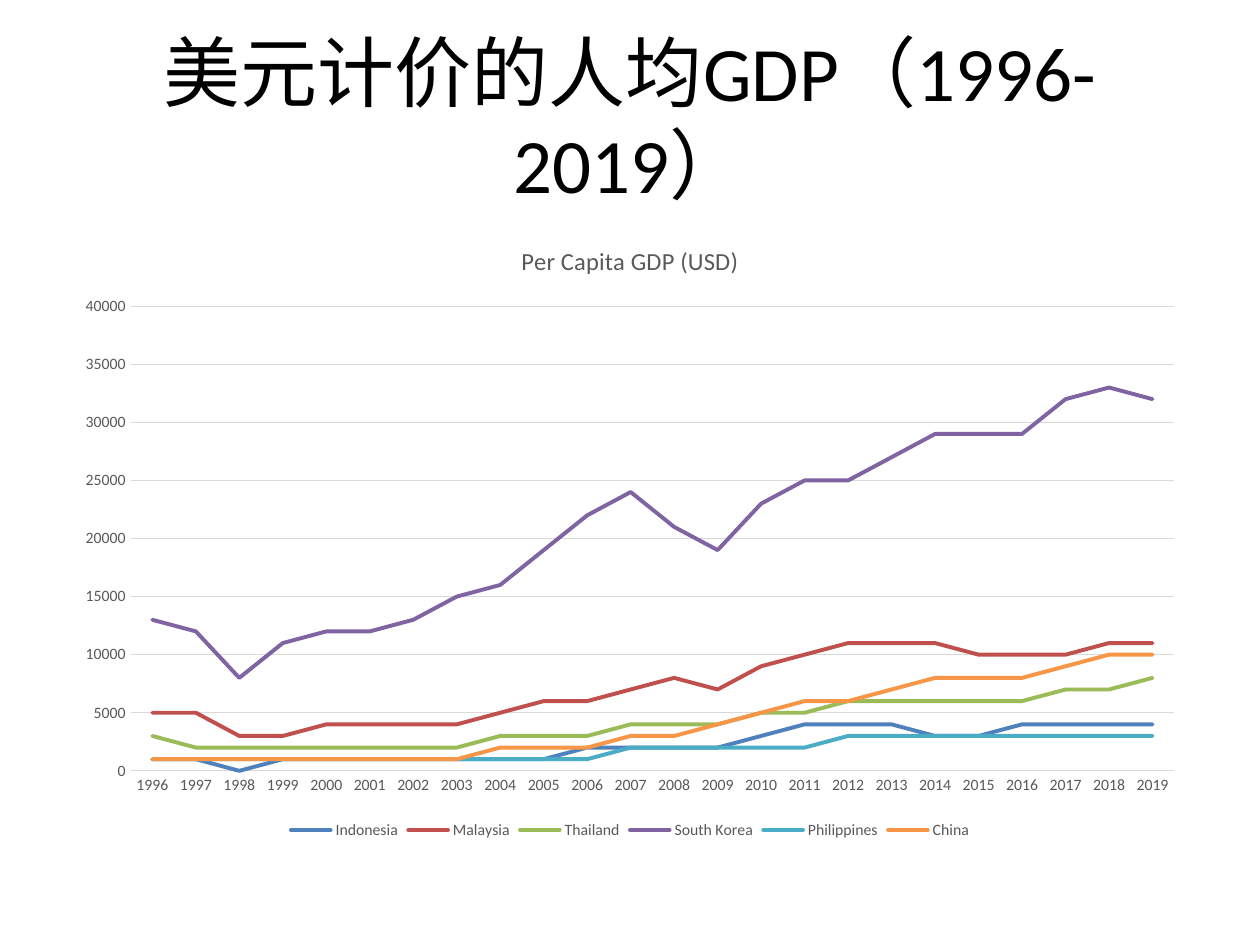
import lxml.etree
import pptx
import pptx.chart.data
import pptx.dml.color
import pptx.enum.chart
import pptx.enum.text
import pptx.util

Inches = pptx.util.Inches
Pt = pptx.util.Pt
ENUM = pptx.enum.chart
FACE = "Calibri"
HEX = {
    "black": "000000", "gray": "595959", "grid": "D9D9D9",
    "Indonesia": "4F81BD", "Malaysia": "C0504D", "Thailand": "9BBB59",
    "South Korea": "8064A2", "Philippines": "4BACC6", "China": "F79646",
}
YEARS = [str(year) for year in range(1996, 2020)]
THOUSANDS = {
    "Indonesia": [1, 1, 0, 1, 1, 1, 1, 1, 1, 1, 2, 2, 2, 2, 3, 4, 4, 4, 3, 3, 4, 4, 4, 4],
    "Malaysia": [5, 5, 3, 3, 4, 4, 4, 4, 5, 6, 6, 7, 8, 7, 9, 10, 11, 11, 11, 10, 10, 10, 11, 11],
    "Thailand": [3, 2, 2, 2, 2, 2, 2, 2, 3, 3, 3, 4, 4, 4, 5, 5, 6, 6, 6, 6, 6, 7, 7, 8],
    "South Korea": [13, 12, 8, 11, 12, 12, 13, 15, 16, 19, 22, 24,
                    21, 19, 23, 25, 25, 27, 29, 29, 29, 32, 33, 32],
    "Philippines": [1, 1, 1, 1, 1, 1, 1, 1, 1, 1, 1, 2, 2, 2, 2, 2, 3, 3, 3, 3, 3, 3, 3, 3],
    "China": [1, 1, 1, 1, 1, 1, 1, 1, 2, 2, 2, 3, 3, 4, 5, 6, 6, 7, 8, 8, 8, 9, 10, 10],
}


def put(item, values):
    for name, value in values.items():
        setattr(item, name, value)


def tint(name):
    return pptx.dml.color.RGBColor.from_string(HEX[name])


def style(font, size, name):
    put(font, {"name": FACE, "size": Pt(size), "bold": False})
    font.color.rgb = tint(name)


def stroke(line, name, width):
    line.color.rgb = tint(name)
    line.width = Pt(width)


def add_title(slide, box):
    title = slide.shapes.title
    put(title, dict(zip(("left", "top", "width", "height"), box)))
    frame = title.text_frame
    put(frame, {
        "text": "美元计价的人均GDP（1996-2019）",
        "word_wrap": True,
        "auto_size": pptx.enum.text.MSO_AUTO_SIZE.NONE,
        "vertical_anchor": pptx.enum.text.MSO_ANCHOR.MIDDLE,
    })
    para = frame.paragraphs[0]
    para.alignment = pptx.enum.text.PP_ALIGN.CENTER
    style(para.runs[0].font, 44, "black")


def add_lines(slide, box):
    data = pptx.chart.data.CategoryChartData()
    data.categories = YEARS
    for name, values in THOUSANDS.items():
        data.add_series(name, [value * 1000 for value in values])
    chart = slide.shapes.add_chart(ENUM.XL_CHART_TYPE.LINE, *box, data).chart
    style(chart.font, 10, "black")

    chart.has_title = True
    head = chart.chart_title.text_frame
    head.text = "Per Capita GDP (USD)"
    style(head.paragraphs[0].runs[0].font, 14, "gray")

    chart.has_legend = True
    put(chart.legend, {"position": ENUM.XL_LEGEND_POSITION.BOTTOM, "include_in_layout": False})
    style(chart.legend.font, 9, "gray")

    for axis in (chart.category_axis, chart.value_axis):
        put(axis, {"major_tick_mark": ENUM.XL_TICK_MARK.NONE,
                   "minor_tick_mark": ENUM.XL_TICK_MARK.NONE})
        style(axis.tick_labels.font, 9, "gray")
    stroke(chart.category_axis.format.line, "grid", 0.75)
    put(chart.value_axis, {"minimum_scale": 0, "maximum_scale": 40000, "major_unit": 5000})
    chart.value_axis.format.line.fill.background()
    stroke(chart.value_axis.major_gridlines.format.line, "grid", 0.75)

    plot = chart.plots[0]
    plot.vary_by_categories = False
    for series in plot.series:
        series.smooth = False
        series.marker.style = ENUM.XL_MARKER_STYLE.NONE
        stroke(series.format.line, series.name, 2.25)
        line = series.format.line.fill._xPr
        line.set("cap", "rnd")
        lxml.etree.SubElement(line, pptx.oxml.ns.qn("a:round"))


def main():
    deck = pptx.Presentation()
    put(deck, {"slide_width": Inches(10), "slide_height": Inches(7.5)})
    slide = deck.slides.add_slide(deck.slide_layouts[5])
    add_title(slide, (Inches(0.5), Inches(0.3), Inches(9), Inches(1.25)))
    add_lines(slide, (Inches(0.5), Inches(1.75), Inches(9), Inches(4.95)))
    deck.save("out.pptx")


if __name__ == "__main__":
    main()
